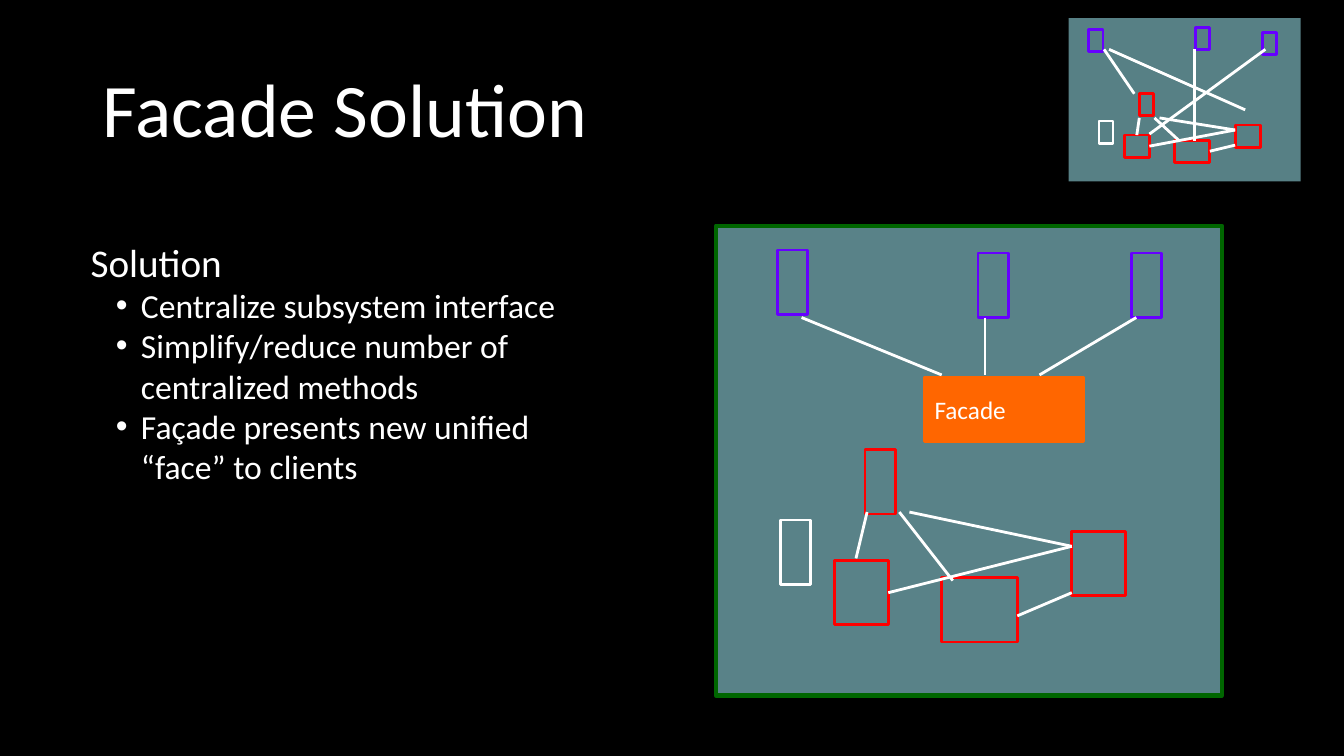
from dataclasses import dataclass

from lxml import etree
from pptx import Presentation
from pptx.dml.color import RGBColor
from pptx.enum.shapes import MSO_CONNECTOR, MSO_SHAPE
from pptx.enum.text import MSO_ANCHOR, PP_ALIGN
from pptx.oxml.ns import qn
from pptx.util import Inches, Pt


@dataclass(frozen=True)
class Theme:
    font: str = "Calibri"
    title: int = 54
    heading: int = 28
    bullet: int = 24
    label: int = 18
    line: int = 2
    frame: int = 3
    back: str = "000000"
    white: str = "FFFFFF"
    panel: str = "8DCFD8"
    green: str = "006600"
    red: str = "FF0000"
    violet: str = "6600FF"
    orange: str = "FF6600"


class SlideBuilder:
    def __init__(self, slide, theme):
        self.s, self.theme = slide, theme
        fill = slide.background.fill
        fill.solid()
        fill.fore_color.rgb = RGBColor.from_string(theme.back)

    def rect(self, at, fill=None, line=None, width=None, alpha=None):
        sp = self.s.shapes.add_shape(MSO_SHAPE.RECTANGLE, *map(Inches, at))
        sp.shadow.inherit = False
        if fill:
            sp.fill.solid()
            sp.fill.fore_color.rgb = RGBColor.from_string(fill)
        else:
            sp.fill.background()
        if alpha:
            color = sp._element.spPr.find(qn("a:solidFill")).find(qn("a:srgbClr"))
            etree.SubElement(color, qn("a:alpha"), val=str(alpha * 1000))
        if line:
            sp.line.color.rgb = RGBColor.from_string(line)
            sp.line.width = Pt(width or self.theme.line)
        else:
            sp.line.fill.background()
        return sp

    def boxes(self, places, size, color):
        """Outlined boxes; a place may carry its own width as third value."""
        return [self.rect((x, y, *(own or size[:1]), size[1]), line=color)
                for x, y, *own in places]

    def link(self, x1, y1, x2, y2, end=None):
        """Plain line; end is an optional (box, side) to join."""
        cx = self.s.shapes.add_connector(
            MSO_CONNECTOR.STRAIGHT, *map(Inches, (x1, y1, x2, y2)))
        cx.line.color.rgb = RGBColor.from_string(self.theme.white)
        cx.line.width = Pt(self.theme.line)
        etree.SubElement(cx._element.spPr, qn("a:effectLst"))
        if end:
            cx.end_connect(*end)

    def text_box(self, at, anchor=MSO_ANCHOR.TOP):
        tf = self.s.shapes.add_textbox(*map(Inches, at)).text_frame
        tf.word_wrap = True
        tf.vertical_anchor = anchor
        return tf

    def add_text(self, p, text, size):
        p.alignment = PP_ALIGN.LEFT
        r = p.add_run()
        r.text = text
        r.font.name = self.theme.font
        r.font.size = Pt(size)
        r.font.color.rgb = RGBColor.from_string(self.theme.white)

    def bullet(self, tf, text):
        p = tf.add_paragraph()
        p.level = 1
        pPr = p._p.get_or_add_pPr()
        pPr.set("marL", str(Inches(0.5)))
        pPr.set("indent", str(Inches(-0.25)))
        etree.SubElement(pPr, qn("a:buFont"), typeface="Arial")
        etree.SubElement(pPr, qn("a:buChar"), char="•")
        self.add_text(p, text, self.theme.bullet)


def main():
    prs = Presentation()
    prs.slide_width, prs.slide_height = Inches(13.33), Inches(7.5)
    t = Theme()
    s = SlideBuilder(prs.slides.add_slide(prs.slide_layouts[6]), t)

    # Panels behind the two diagrams
    s.rect((7.1, 2.24, 5.02, 4.66), t.panel, t.green, t.frame, alpha=63)
    s.rect((10.6, 0.18, 2.3, 1.62), t.panel, alpha=62)

    # Title
    tf = s.text_box((0.92, 0.4, 11.5, 1.45), MSO_ANCHOR.MIDDLE)
    tf.paragraphs[0].line_spacing = 0.9
    s.add_text(tf.paragraphs[0], "Facade Solution", t.title)

    # Body text
    tf = s.text_box((0.8, 2.31, 5.42, 4.19))
    s.add_text(tf.paragraphs[0], "Solution", t.heading)
    for text in ("Centralize subsystem interface",
                 "Simplify/reduce number of centralized methods",
                 "Façade presents new unified “face” to clients"):
        s.bullet(tf, text)

    # Small diagram: clients reach into the subsystem directly
    small = (0.14, 0.22)
    s.boxes([(10.9, 1.2)], small, t.white)
    top, right, left, middle = s.boxes(
        [(11.3, 0.93), (12.25, 1.24, 0.25), (11.15, 1.34, 0.25),
         (11.65, 1.39, 0.35)], small, t.red)
    s.boxes([(10.8, 0.29), (11.86, 0.27), (12.52, 0.32)], small, t.violet)
    for line in [(11.3, 1.17, 11.25, 1.33, (left, 0)),
                 (11.5, 1.17, 12.25, 1.29),
                 (12.25, 1.44, 12, 1.52, (middle, 3)),
                 (11.45, 1.17, 11.7, 1.4),
                 (12.25, 1.29, 11.4, 1.44, (left, 3)),
                 (11, 0.49, 12.35, 1.09),
                 (11.85, 0.49, 11.85, 1.4),
                 (12.55, 0.49, 11.4, 1.33),
                 (10.95, 0.49, 11.25, 0.93)]:
        s.link(*line)

    # Large diagram: the subsystem
    large = (0.3, 0.64)
    s.boxes([(7.74, 5.16)], large, t.white)
    top, right, left, middle = s.boxes(
        [(8.58, 4.46), (10.63, 5.27, 0.53), (8.28, 5.56, 0.53),
         (9.34, 5.73, 0.75)], large, t.red)
    for line in [(8.6, 5.08, 8.49, 5.54),
                 (9.02, 5.08, 10.63, 5.42),
                 (10.63, 5.88, 10.09, 6.11),
                 (8.92, 5.08, 9.45, 5.76),
                 (10.63, 5.42, 8.81, 5.88, (left, 3))]:
        s.link(*line)

    # Large diagram: clients and the facade between
    s.boxes([(7.71, 2.48), (9.7, 2.51), (11.22, 2.51)], large, t.violet)
    tf = s.rect((9.17, 3.74, 1.58, 0.64), t.orange, t.orange).text_frame
    tf.word_wrap = False
    tf.vertical_anchor = MSO_ANCHOR.MIDDLE
    s.add_text(tf.paragraphs[0], "Facade", t.label)
    for client_x, facade_x in [(7.95, 9.34), (9.77, 9.77), (11.27, 10.31)]:
        s.link(client_x, 3.15, facade_x, 3.72)

    prs.save("out.pptx")


if __name__ == "__main__":
    main()
